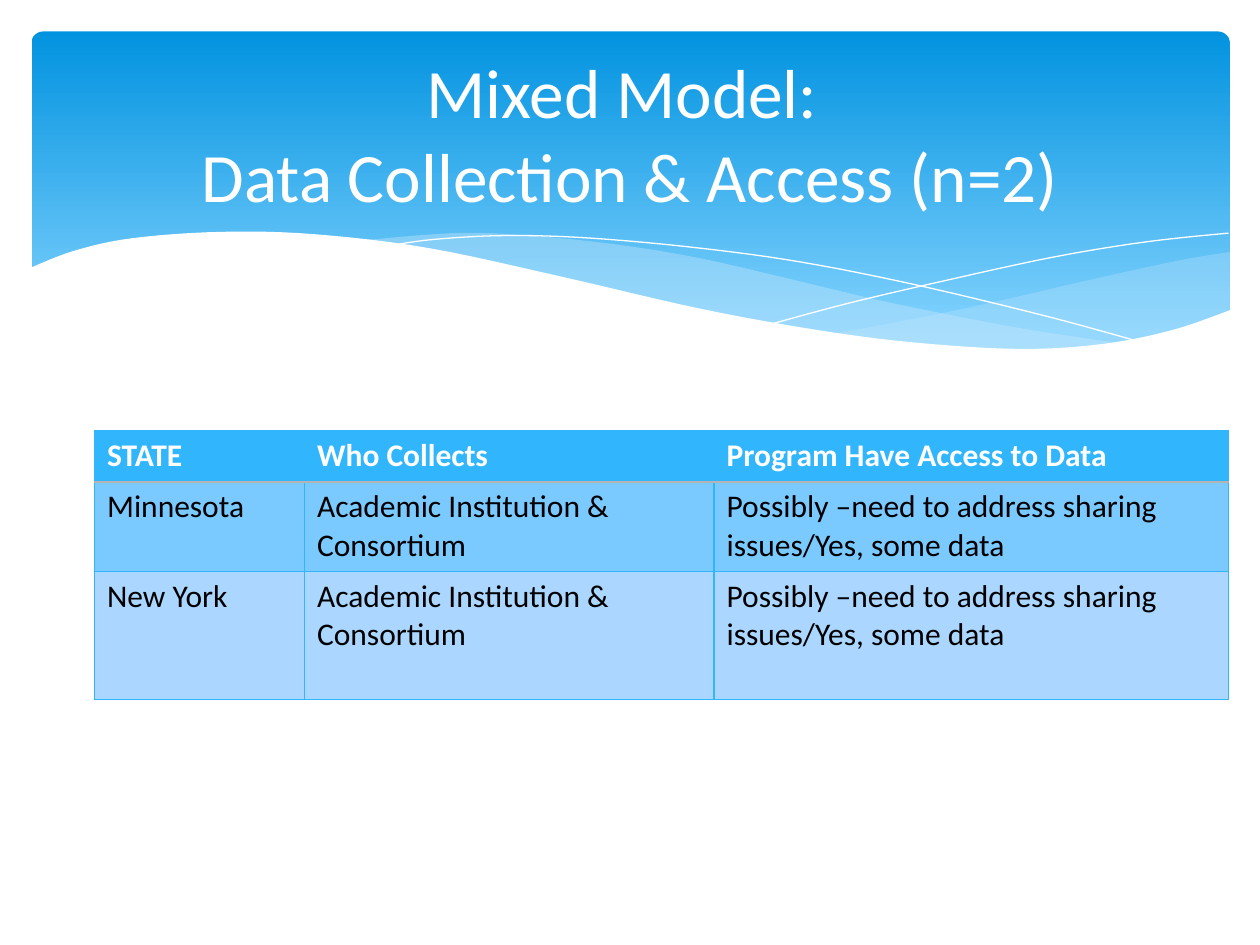
from dataclasses import dataclass

from lxml import etree
from pptx import Presentation
from pptx import util as u
from pptx.dml.color import RGBColor
from pptx.enum import shapes, text
from pptx.oxml.ns import qn


@dataclass(frozen=True)
class Theme:
    """Colours, font and type sizes of the deck."""
    white: str = "FFFFFF"
    black: str = "000000"
    sky_top: str = "0293E0"
    sky_bottom: str = "83D3FE"
    swell: str = "C6E7FC"
    accent: str = "31B6FD"
    rule: str = "B4B4B4"
    bands: tuple = ("7AC9FF", "AAD6FF")
    font: str = "Calibri"
    title_size: float = 39.6
    body_size: float = 18


THEME = Theme()

RIGHT_SWELL = (
    [(685, 126), (655, 131), (602, 142.6), (543, 156.2), (490, 167), (458, 172.8)],
    [(458, 172.8), (500, 177.8), (544, 181), (583, 181.4), (616, 178.6), (650, 171.4), (685, 160)],
)
MIDDLE_SWELL = (
    [(625, 178.6), (563, 169.2), (490, 154.8), (435, 141.8), (382, 129.6), (334, 121.7),
     (284, 116.6), (242, 115.2), (188, 119.5)],
    [(188, 119.5), (243, 128.2), (305, 141.8), (364, 154.8), (415, 165.6), (472, 175),
     (521, 180.7), (571, 182.2), (625, 178.6)],
)
FALLING_LINE = [(204.5, 122.4), (230, 118.8), (271, 116.6), (320, 118.1), (382, 123.8),
                (440, 131.8), (505, 144.7), (580, 162.7), (635, 177.8)]
RISING_LINE = [(423.4, 167), (466, 155.5), (521, 142.6), (584, 128.9), (637, 120.2), (684, 115.2)]
FOREGROUND = (
    [(-1.4, 135.4), (24.5, 125.3), (58, 118.1), (109, 114.5), (162, 115.9), (227, 123.8),
     (304, 140.4), (382, 158.4), (449, 170.6), (505, 177.8), (564.5, 181.4), (612, 178.6),
     (652, 170.6), (685.4, 159.1)],
    [(685.4, 219), (-1.4, 219)],
)


def colour(value):
    """Turn a hex string into a colour."""
    return RGBColor.from_string(value)


def smooth(knots, steps=6):
    """Return points of a Catmull-Rom curve through the knots."""
    padded = [knots[0], *knots, knots[-1]]
    points = [knots[0]]
    for a, b, c, d in zip(padded, padded[1:], padded[2:], padded[3:]):
        for step in range(1, steps + 1):
            t = step / steps
            points.append(tuple(
                (2 * q + (r - p) * t + (2 * p - 5 * q + 4 * r - s) * t ** 2
                 + (3 * q - p - 3 * r + s) * t ** 3) / 2
                for p, q, r, s in zip(a, b, c, d)))
    return points


def add_outline(page, origin, points, closed):
    """Add a freeform whose points are offsets from the origin."""
    placed = [(u.Pt(origin[0] + x), u.Pt(origin[1] + y)) for x, y in points]
    builder = page.shapes.build_freeform(*placed[0])
    builder.add_line_segments(placed[1:], close=closed)
    outline = builder.convert_to_shape()
    outline.shadow.inherit = False
    return outline


def add_area(page, origin, edges, fill, opacity=100):
    """Add a filled area bounded by two edges."""
    points = [point for edge in edges for point in (smooth(edge) if len(edge) > 2 else edge)]
    area = add_outline(page, origin, points, True)
    area.fill.solid()
    area.fill.fore_color.rgb = colour(fill)
    area.line.fill.background()
    if opacity < 100:
        tone = area.fill._xPr.find(qn("a:solidFill"))[0]
        etree.SubElement(tone, qn("a:alpha"), val=str(opacity * 1000))


def add_banner(page, left, top, width, height):
    """Draw the gradient banner and its waves."""
    sky = page.shapes.add_shape(shapes.MSO_SHAPE.ROUNDED_RECTANGLE,
                                *map(u.Pt, (left, top, width, height)))
    sky.adjustments[0] = 0.034
    sky.shadow.inherit = False
    sky.line.fill.background()
    sky.fill.gradient()
    sky.fill.gradient_angle = 270
    stops = ((0, THEME.sky_top), (0.9, THEME.sky_bottom))
    for stop, (position, tone) in zip(sky.fill.gradient_stops, stops):
        stop.position = position
        stop.color.rgb = colour(tone)

    origin = left, top
    add_area(page, origin, RIGHT_SWELL, THEME.swell, 29)
    add_area(page, origin, MIDDLE_SWELL, THEME.swell, 40)
    for knots in (FALLING_LINE, RISING_LINE):
        ripple = add_outline(page, origin, smooth(knots), False)
        ripple.fill.background()
        ripple.line.color.rgb = colour(THEME.white)
        ripple.line.width = u.Pt(0)
    add_area(page, origin, FOREGROUND, THEME.white)


def style_font(font, size, tone, bold=False):
    """Apply the deck font with a size and colour."""
    font.name, font.size, font.bold = THEME.font, u.Pt(size), bold
    font.color.rgb = colour(tone)


def add_title(page, left, top, width, height, words):
    """Place the centred title."""
    box = page.shapes.add_textbox(*map(u.Pt, (left, top, width, height)))
    frame = box.text_frame
    frame.word_wrap = True
    frame.vertical_anchor = text.MSO_ANCHOR.MIDDLE
    para = frame.paragraphs[0]
    para.text = words
    para.alignment = text.PP_ALIGN.CENTER
    style_font(para.font, THEME.title_size, THEME.white)


def add_border(cell, side, tone, width):
    """Draw one side of a cell's border."""
    line = etree.SubElement(cell._tc.get_or_add_tcPr(), qn(f"a:ln{side}"), w=str(u.Pt(width)))
    fill = etree.SubElement(line, qn("a:solidFill"))
    etree.SubElement(fill, qn("a:srgbClr"), val=tone)


def add_state_table(page, left, top, columns, heights, rows):
    """Place the table of states with a header and banded rows."""
    frame = page.shapes.add_table(len(rows), len(columns), *map(
        u.Pt, (left, top, sum(columns), sum(heights))))
    table = frame.table
    for column, width in zip(table.columns, columns):
        column.width = u.Pt(width)
    for index, (row, height, words) in enumerate(zip(table.rows, heights, rows)):
        row.height = u.Pt(height)
        header = index == 0
        fill = THEME.accent if header else THEME.bands[(index - 1) % 2]
        for cell, content in zip(row.cells, words):
            for side in "LRTB":
                ruled = (index, side) in ((0, "B"), (1, "T"))
                add_border(cell, side, *((THEME.rule, 1.25) if ruled else (THEME.accent, 0.75)))
            cell.fill.solid()
            cell.fill.fore_color.rgb = colour(fill)
            cell.text = content
            style_font(cell.text_frame.paragraphs[0].font, THEME.body_size,
                       THEME.white if header else THEME.black, header)


def main():
    """Build and save the deck."""
    deck = Presentation()
    deck.slide_width, deck.slide_height = u.Pt(720), u.Pt(540)
    page = deck.slides.add_slide(deck.slide_layouts[6])
    add_banner(page, 18, 18, 684.7, 194.4)
    collection = ("Academic Institution & Consortium",
                  "Possibly –need to address sharing issues/Yes, some data")
    add_state_table(page, 54, 246, (120, 234, 294), (29.2, 51.2, 73.2), (
        ("STATE", "Who Collects", "Program Have Access to Data"),
        ("Minnesota", *collection),
        ("New York", *collection),
    ))
    add_title(page, 36, 26.6, 648, 98.6, "Mixed Model: \vData Collection & Access (n=2)")
    deck.save("out.pptx")


if __name__ == "__main__":
    main()
